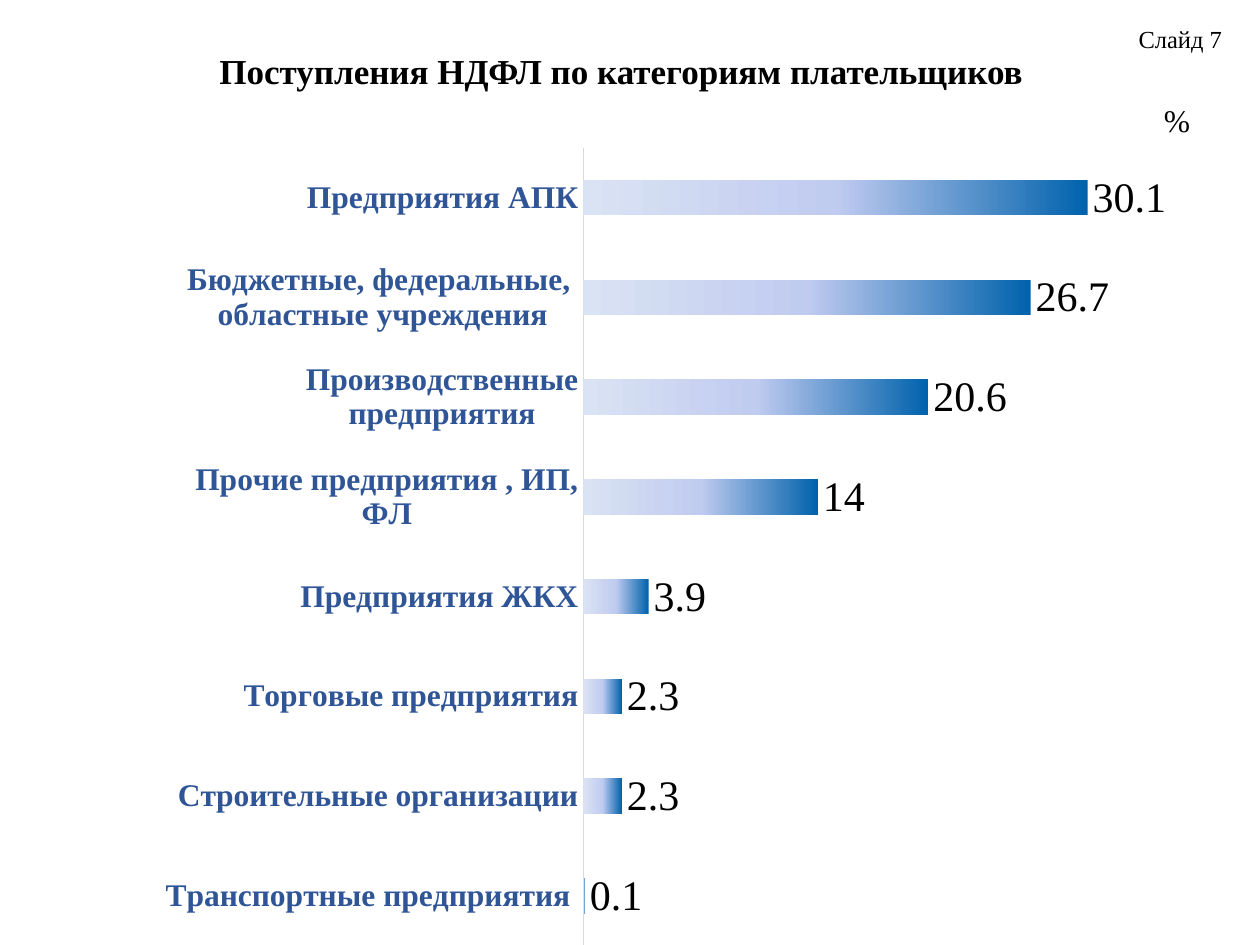
from lxml.etree import SubElement
from pptx import Presentation
from pptx.chart.data import CategoryChartData
from pptx.dml.color import RGBColor
from pptx.enum.chart import XL_CHART_TYPE as ChartType
from pptx.enum.chart import XL_LABEL_POSITION as LabelPosition
from pptx.enum.chart import XL_TICK_MARK as TickMark
from pptx.enum.text import MSO_ANCHOR as Anchor
from pptx.enum.text import MSO_AUTO_SIZE as AutoSize
from pptx.enum.text import PP_ALIGN as Align
from pptx.oxml import parse_xml
from pptx.oxml.ns import nsdecls, qn
from pptx.util import Pt

BLACK = RGBColor(0x00, 0x00, 0x00)
LABEL_BLUE = RGBColor(0x2F, 0x55, 0x97)
AXIS_GREY = RGBColor(0xD9, 0xD9, 0xD9)
BAR_STOPS = (
    (0, RGBColor(0x00, 0x62, 0xAC)),
    (50, RGBColor(0xC0, 0xCB, 0xF0)),
    (100, RGBColor(0xDA, 0xE3, 0xF3)),
)
SERIF = "Times New Roman"
SHARES = (
    ("Транспортные предприятия ", 0.1),
    ("Строительные организации", 2.3),
    ("Торговые предприятия", 2.3),
    ("Предприятия ЖКХ", 3.9),
    ("Прочие предприятия , ИП, ФЛ", 14),
    ("Производственные предприятия", 20.6),
    ("Бюджетные, федеральные, \nобластные учреждения", 26.7),
    ("Предприятия АПК", 30.1),
)


def style_font(font, size, color=BLACK, bold=False, name=SERIF):
    """Set the face, size, weight and colour of a font."""
    font.name, font.size, font.bold = name, Pt(size), bold
    font.color.rgb = color


def write_text(frame, text, size, bold=False, align=Align.LEFT, spacing=None):
    """Write one formatted paragraph into a text frame."""
    para = frame.paragraphs[0]
    para.alignment = align
    para.line_spacing = spacing
    span = para.add_run()
    span.text = text
    style_font(span.font, size, bold=bold)


def place_title(page, box):
    """Move the title placeholder to its box and fill it."""
    title = page.shapes.title
    title.left, title.top, title.width, title.height = map(Pt, box)
    title.text_frame.vertical_anchor = Anchor.MIDDLE
    write_text(title.text_frame, "Поступления НДФЛ по категориям плательщиков ",
               20, bold=True, align=Align.CENTER, spacing=0.9)


def place_note(page, box, text, size, wrap):
    """Add a small text box that grows with its text."""
    frame = page.shapes.add_textbox(*map(Pt, box)).text_frame
    frame.word_wrap = wrap
    frame.auto_size = AutoSize.SHAPE_TO_FIT_TEXT
    write_text(frame, text, size)


def set_plot_layout(chart, **fractions):
    """Fix the inner plot area as fractions of the chart box."""
    plot_area = chart._chartSpace.chart.plotArea
    for old in plot_area.findall(qn("c:layout")):
        plot_area.remove(old)
    layout = parse_xml(f"<c:layout {nsdecls('c')}/>")
    manual = SubElement(layout, qn("c:manualLayout"))
    settings = {"layoutTarget": "inner", "xMode": "edge", "yMode": "edge", **fractions}
    for tag, value in settings.items():
        SubElement(manual, qn(f"c:{tag}")).set("val", str(value))
    plot_area.insert(0, layout)


def fill_gradient(series):
    """Fill the bars with a three-stop gradient, light to dark."""
    series.format.fill.gradient()
    gradient = series.format.fill._xPr.find(qn("a:gradFill"))
    stops = "".join(
        f'<a:gs pos="{place * 1000}"><a:srgbClr val="{color}"/></a:gs>'
        for place, color in BAR_STOPS
    )
    gradient.getparent().replace(gradient, parse_xml(
        f'<a:gradFill {nsdecls("a")} rotWithShape="1"><a:gsLst>{stops}</a:gsLst>'
        '<a:lin ang="10800000" scaled="0"/></a:gradFill>'))


def place_chart(page, box):
    """Add the bar chart of tax shares by payer category."""
    data = CategoryChartData()
    data.categories = [name for name, _ in SHARES]
    data.add_series("Series 1", [share for _, share in SHARES])
    chart = page.shapes.add_chart(ChartType.BAR_CLUSTERED, *map(Pt, box), data).chart
    chart.has_title = False
    chart.has_legend = False
    style_font(chart.font, 10, name="Calibri")
    set_plot_layout(chart, x=0.42, y=0.02, w=0.56, h=0.96)

    categories = chart.category_axis
    categories.major_tick_mark = categories.minor_tick_mark = TickMark.NONE
    categories.format.line.color.rgb = AXIS_GREY
    categories.format.line.width = Pt(0.75)
    style_font(categories.tick_labels.font, 18, LABEL_BLUE, bold=True)

    values = chart.value_axis
    values.visible = False
    values.has_major_gridlines = False
    values.minimum_scale, values.maximum_scale = 0, 35

    plot = chart.plots[0]
    plot.gap_width = 182
    plot.vary_by_categories = False
    fill_gradient(plot.series[0])
    labels = plot.series[0].data_labels
    labels.show_value = True
    labels.position = LabelPosition.OUTSIDE_END
    style_font(labels.font, 24)


def main():
    """Build the slide and save the deck."""
    deck = Presentation()
    deck.slide_width, deck.slide_height = Pt(720), Pt(540)
    page = deck.slides.add_slide(deck.slide_layouts[5])
    place_title(page, (70.5, 15, 574, 54))
    place_note(page, (643.5, 10, 63, 24.5), "Слайд 7", 14, wrap=False)
    place_chart(page, (82, 75, 598.5, 475))
    place_note(page, (658, 54, 35.5, 29), "%", 18, wrap=True)
    deck.save("out.pptx")


if __name__ == "__main__":
    main()
